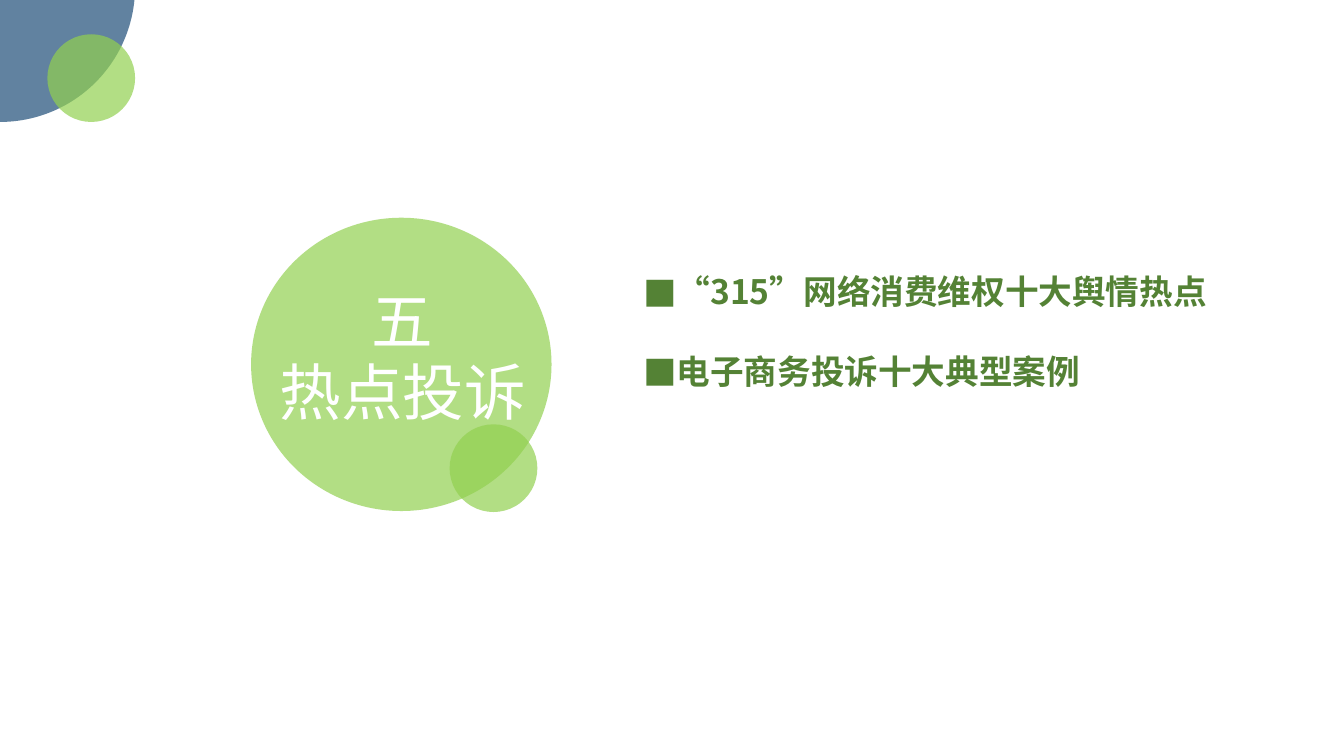
from lxml import etree
from pptx import Presentation
from pptx.dml.color import RGBColor
from pptx.enum import shapes, text
from pptx.oxml.ns import qn
from pptx.util import Inches, Pt

GREEN = RGBColor(0x92, 0xD0, 0x50)
NAVY = RGBColor(0x1F, 0x4E, 0x79)
DARK_GREEN = RGBColor(0x54, 0x82, 0x35)
WHITE = RGBColor(0xFF, 0xFF, 0xFF)
FONT = "Noto Sans CJK SC"
OPACITY = 70
INDENT = Inches(0.31)

SECTION_CIRCLES = [
    (2.49, 2.16, 2.98, 2.91, GREEN),
    (4.46, 4.21, 0.87, 0.87, GREEN),
]
CORNER_CIRCLES = [
    (-1.34, -1.47, 2.68, 2.68, NAVY),
    (0.47, 0.34, 0.87, 0.87, GREEN),
]
TITLE_LINES = ["五", "热点投诉"]
TOPICS = ["“315”网络消费维权十大舆情热点", "电子商务投诉十大典型案例"]
TITLE_FORMAT = {"size": Pt(44), "bold": False, "name": FONT}
TOPIC_FORMAT = {"size": Pt(24), "bold": True, "name": FONT}


def add_circle(page, left, top, width, height, color):
    circle = page.shapes.add_shape(
        shapes.MSO_SHAPE.OVAL, *map(Inches, (left, top, width, height)))
    circle.shadow.inherit = False
    circle.line.fill.background()
    circle.fill.solid()
    circle.fill.fore_color.rgb = color
    rgb = circle.fill._xPr.find(".//" + qn("a:srgbClr"))
    etree.SubElement(rgb, qn("a:alpha"), val=str(OPACITY * 1000))


def add_bullet(para):
    properties = para._p.get_or_add_pPr()
    properties.set("marL", str(INDENT))
    properties.set("indent", str(-INDENT))
    etree.SubElement(properties, qn("a:buFont"), typeface=FONT)
    etree.SubElement(properties, qn("a:buChar"), char="■")


def write_lines(box, lines, values, color, align, spacing, bulleted=False):
    frame = box.text_frame
    frame.word_wrap = True
    frame.auto_size = text.MSO_AUTO_SIZE.NONE
    frame.vertical_anchor = text.MSO_ANCHOR.TOP
    for index, line in enumerate(lines):
        para = frame.add_paragraph() if index else frame.paragraphs[0]
        para.alignment = align
        para.line_spacing = spacing
        para.space_before = Pt(0)
        if bulleted:
            add_bullet(para)
        span = para.add_run()
        span.text = line
        for name, value in values.items():
            setattr(span.font, name, value)
        span.font.color.rgb = color
        etree.SubElement(span._r.get_or_add_rPr(), qn("a:ea"), typeface=FONT)


def place_title(page):
    title = page.shapes.title
    position = {"left": 1.83, "top": 2.78, "width": 4.33, "height": 1.52}
    for name, value in position.items():
        setattr(title, name, Inches(value))
    write_lines(title, TITLE_LINES, TITLE_FORMAT, WHITE,
                text.PP_ALIGN.CENTER, Pt(51))
    page.shapes._spTree.append(title._element)


def add_topics(page):
    box = page.shapes.add_textbox(
        Inches(6.28), Inches(2.25), Inches(6.41), Inches(1.68))
    write_lines(box, TOPICS, TOPIC_FORMAT, DARK_GREEN,
                text.PP_ALIGN.LEFT, Pt(57), bulleted=True)


def main():
    deck = Presentation()
    deck.slide_width = Inches(13.33)
    deck.slide_height = Inches(7.5)
    page = deck.slides.add_slide(deck.slide_layouts.get_by_name("Title Only"))
    for circle in SECTION_CIRCLES:
        add_circle(page, *circle)
    place_title(page)
    add_topics(page)
    for circle in CORNER_CIRCLES:
        add_circle(page, *circle)
    deck.save("out.pptx")


if __name__ == "__main__":
    main()
